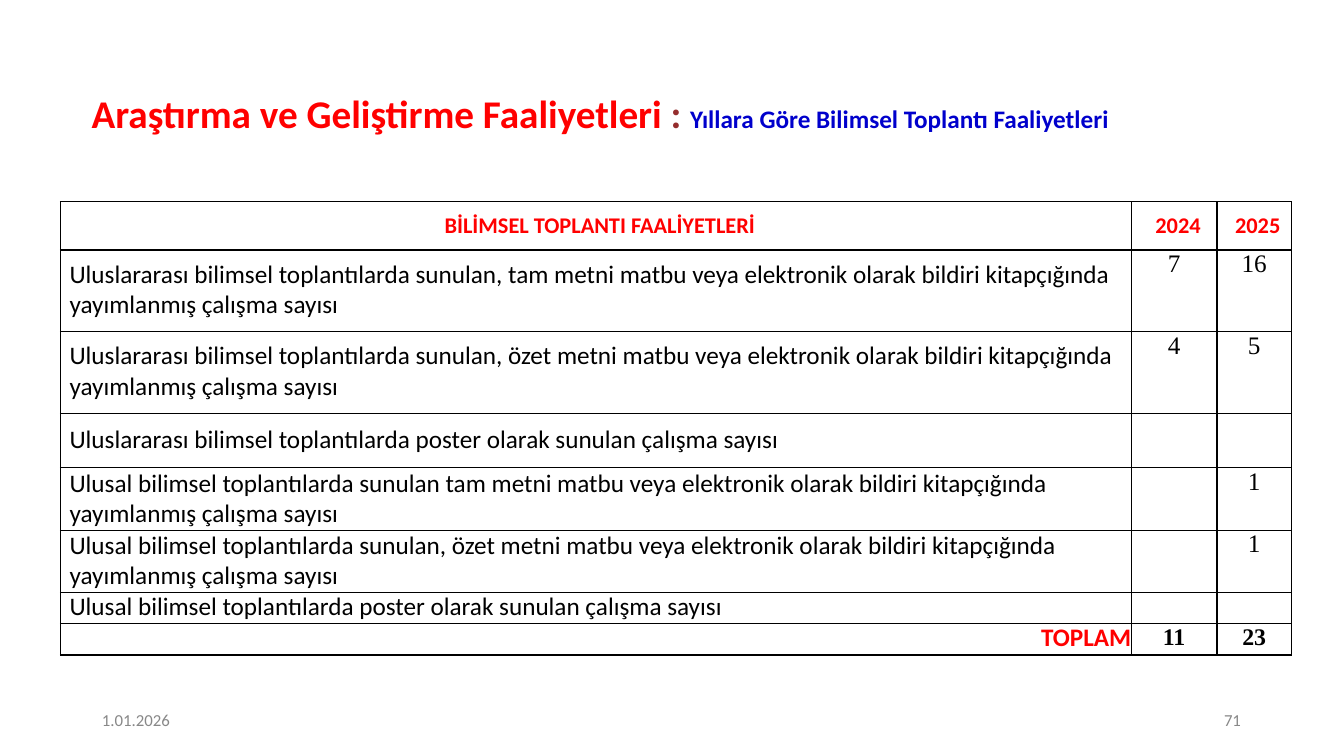
"""Builds the slide on scientific meeting activities by year."""
from lxml.etree import SubElement
from pptx import Presentation
from pptx.dml.color import RGBColor
from pptx.enum.text import MSO_ANCHOR, PP_ALIGN
from pptx.oxml.ns import qn
from pptx.util import Inches, Pt

COLORS = {"red": "FF0000", "maroon": "952D2D", "blue": "0000CC",
          "gray": "888888", "black": "000000"}


def write(paragraph, text, size=18, font="Calibri", color="black", bold=False,
          align=PP_ALIGN.LEFT, line=None):
    paragraph.alignment = align
    if line:
        paragraph.line_spacing = Pt(line)
    run = paragraph.add_run()
    run.text = text
    run.font.size = Pt(size)
    run.font.name = font
    run.font.bold = bold
    run.font.color.rgb = RGBColor.from_string(COLORS[color])


def set_margins(target, left=0, top=0):
    target.margin_left, target.margin_top = Inches(left), Inches(top)
    target.margin_right = target.margin_bottom = 0
    target.vertical_anchor = MSO_ANCHOR.TOP


presentation = Presentation()
presentation.slide_width = Inches(13.33)
presentation.slide_height = Inches(7.5)
slide = presentation.slides.add_slide(presentation.slide_layouts[5])

heading = slide.shapes.title
heading.left, heading.top = Inches(0.36), Inches(0.65)
heading.width, heading.height = Inches(11.42), Inches(1.04)
set_margins(heading.text_frame, left=0.55, top=0.24)
for text, size, color in [("Araştırma ve Geliştirme Faaliyetleri ", 28, "red"),
                          (": ", 28, "maroon"),
                          ("Yıllara Göre Bilimsel Toplantı Faaliyetleri", 18, "blue")]:
    write(heading.text_frame.paragraphs[0], text, size=size, color=color, bold=True)

for text, left, width, indent in [("1.01.2026", 1, 0.71, 0.01), ("71", 12.1, 0.27, 0.04)]:
    footer = slide.shapes.add_textbox(Inches(left), Inches(7.07), Inches(width), Inches(0.2))
    footer.text_frame.word_wrap = True
    set_margins(footer.text_frame, left=indent)
    write(footer.text_frame.paragraphs[0], text, size=12, color="gray", line=12.4)

header = ["BİLİMSEL TOPLANTI FAALİYETLERİ", "2024", "2025"]
activities = [
    ("Uluslararası bilimsel toplantılarda sunulan, tam metni matbu veya elektronik "
     "olarak bildiri kitapçığında yayımlanmış çalışma sayısı", "7", "16", 0.81, 0.09, None),
    ("Uluslararası bilimsel toplantılarda sunulan, özet metni matbu veya elektronik "
     "olarak bildiri kitapçığında yayımlanmış çalışma sayısı", "4", "5", 0.81, 0.09, None),
    ("Uluslararası bilimsel toplantılarda poster olarak sunulan çalışma sayısı",
     "", "", 0.54, 0.11, None),
    ("Ulusal bilimsel toplantılarda sunulan tam metni matbu veya elektronik "
     "olarak bildiri kitapçığında yayımlanmış çalışma sayısı", "", "1", 0.62, 0.01, 21.6),
    ("Ulusal bilimsel toplantılarda sunulan, özet metni matbu veya elektronik "
     "olarak bildiri kitapçığında yayımlanmış çalışma sayısı", "", "1", 0.62, 0.01, 21.6),
    ("Ulusal bilimsel toplantılarda poster olarak sunulan çalışma sayısı",
     "", "", 0.31, 0, 21.3),
]
totals = ["TOPLAM", "11", "23"]
row_heights = [0.48, *(activity[3] for activity in activities), 0.31]

meetings = slide.shapes.add_table(len(row_heights), 3, Inches(0.6), Inches(2),
                                  Inches(12.21), Inches(4.5)).table
meetings.first_row = meetings.horz_banding = False
for column, width in zip(meetings.columns, [10.62, 0.85, 0.74]):
    column.width = Inches(width)
for row, height in zip(meetings.rows, row_heights):
    row.height = Inches(height)

for cell in meetings.iter_cells():
    set_margins(cell)
    properties = cell._tc.get_or_add_tcPr()
    for side in ("lnL", "lnR", "lnT", "lnB"):
        border = SubElement(properties, qn(f"a:{side}"), w=str(Pt(1)))
        SubElement(SubElement(border, qn("a:solidFill")), qn("a:srgbClr"), val=COLORS["black"])
    cell.fill.background()

for column, (text, indent) in enumerate(zip(header, [0.08, 0.24, 0.18])):
    cell = meetings.cell(0, column)
    set_margins(cell, left=indent, top=0.1)
    write(cell.text_frame.paragraphs[0], text, size=16, color="red", bold=True,
          align=PP_ALIGN.LEFT if column else PP_ALIGN.CENTER)

for row, (activity, *counts, _, top, line) in enumerate(activities, start=1):
    label = meetings.cell(row, 0)
    set_margins(label, left=0.09, top=top)
    write(label.text_frame.paragraphs[0], activity, line=line)
    for column, count in enumerate(counts, start=1):
        if count:
            write(meetings.cell(row, column).text_frame.paragraphs[0], count,
                  font="Times New Roman", align=PP_ALIGN.CENTER)

total_row = len(row_heights) - 1
write(meetings.cell(total_row, 0).text_frame.paragraphs[0], totals[0], color="red",
      bold=True, align=PP_ALIGN.RIGHT, line=21.3)
for column, total in enumerate(totals[1:], start=1):
    write(meetings.cell(total_row, column).text_frame.paragraphs[0], total, size=17,
          font="Times New Roman", bold=True, align=PP_ALIGN.CENTER)

presentation.save("out.pptx")
